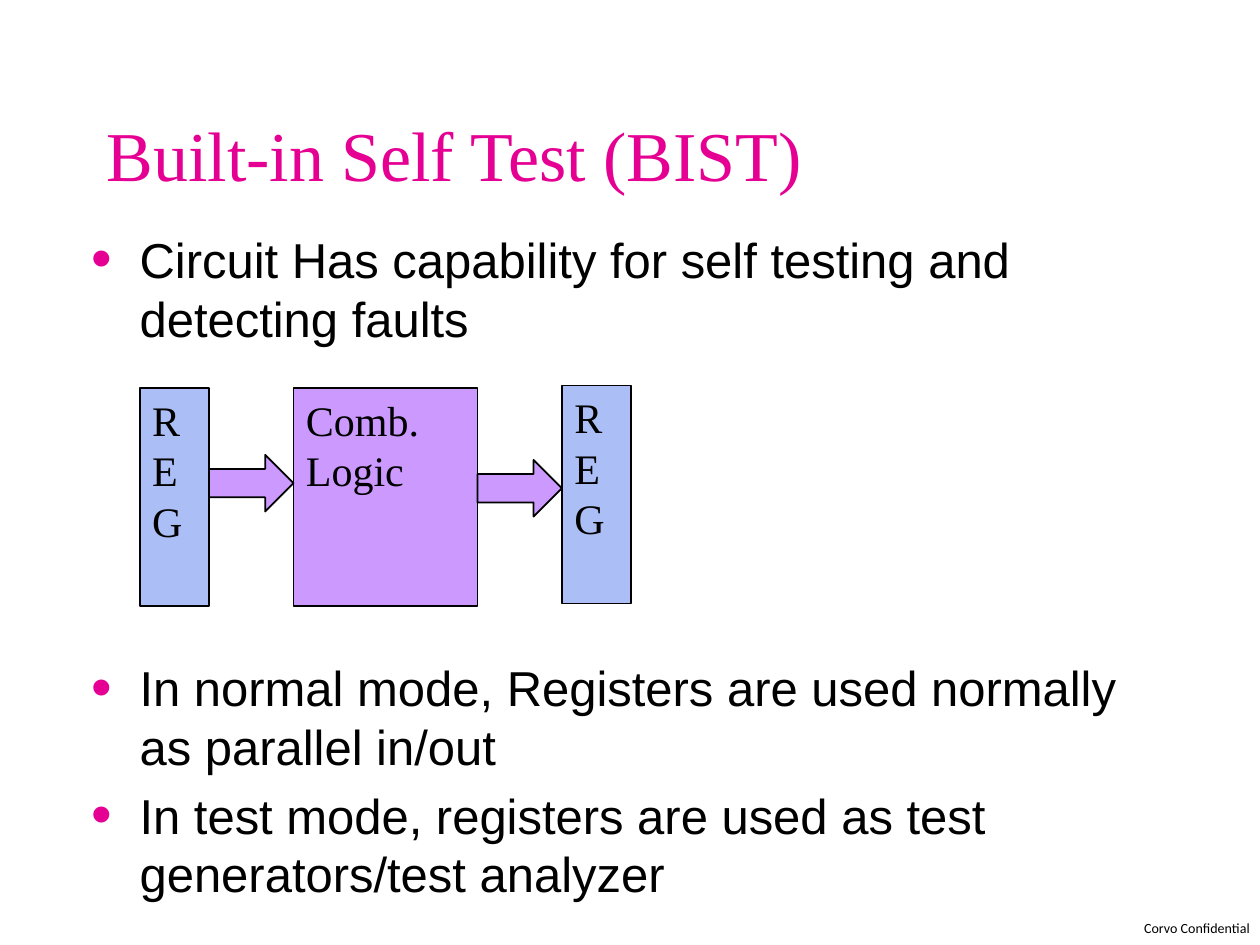
from lxml import etree
from pptx import Presentation
from pptx import util as u
from pptx.dml.color import RGBColor
from pptx.enum import shapes, text
from pptx.oxml.ns import qn

# Content
PINK, BLACK, BLUE, PURPLE = "E50093", "000000", "ABBEF5", "CC99FF"
TITLE_FONT = {"name": "Times New Roman", "size": u.Pt(40)}
BODY_FONT = {"name": "Arial", "size": u.Pt(28)}
BLOCK_FONT = {"name": "Times New Roman", "size": u.Pt(24)}
FOOTER_FONT = {"name": "Calibri", "size": u.Pt(8)}

TITLE = "Built-in Self Test (BIST)"
FOOTER = "Corvo Confidential"
BULLET_GROUPS = [  # top, paragraphs
    (1.77, ["Circuit Has capability for self testing and detecting faults"]),
    (5.17, ["In normal mode, Registers are used normally as parallel in/out",
            "In test mode, registers are used as test generators/test analyzer"]),
]
BLOCKS = [  # paragraphs, top, width, fill
    (["R", "E", "G"], 3.08, 0.55, BLUE),
    (["Comb. Logic"], 3.08, 1.46, PURPLE),
    (["REG"], 3.06, 0.55, BLUE),
]
ARROW_TOPS = [3.61, 3.65]
DIAGRAM_LEFT, BLOCK_HEIGHT, GAP, ARROW_HEIGHT = 1.11, 1.73, 0.67, 0.45

presentation = Presentation()
presentation.slide_width, presentation.slide_height = u.Inches(10), u.Inches(7.5)
slide = presentation.slides.add_slide(presentation.slide_layouts[6])


def color(value):
    return RGBColor.from_string(value)


def add_bullet(paragraph):
    properties = paragraph._p.get_or_add_pPr()
    properties.set("marL", str(u.Inches(0.38)))
    properties.set("indent", str(u.Inches(-0.38)))
    bullet_color = etree.SubElement(properties, qn("a:buClr"))
    etree.SubElement(bullet_color, qn("a:srgbClr"), val=PINK)
    etree.SubElement(properties, qn("a:buSzPct"), val="120000")
    etree.SubElement(properties, qn("a:buFont"), typeface=BODY_FONT["name"])
    etree.SubElement(properties, qn("a:buChar"), char="•")


def write(shape, lines, font, font_color=BLACK, bullets=False, **frame_values):
    frame = shape.text_frame
    for name, value in {"word_wrap": True, **frame_values}.items():
        setattr(frame, name, value)
    for index, line in enumerate(lines):
        paragraph = frame.paragraphs[0] if index == 0 else frame.add_paragraph()
        paragraph.alignment = text.PP_ALIGN.LEFT
        if bullets:
            add_bullet(paragraph)
            if index:
                paragraph.space_before = u.Pt(5.6)
        run = paragraph.add_run()
        run.text = line
        for name, value in font.items():
            setattr(run.font, name, value)
        run.font.color.rgb = color(font_color)


def add_text(left, top, width, height, *args, **kwargs):
    box = slide.shapes.add_textbox(*map(u.Inches, (left, top, width, height)))
    write(box, *args, **kwargs)


def add_shape(kind, left, top, width, height, fill):
    shape = slide.shapes.add_shape(kind, *map(u.Inches, (left, top, width, height)))
    shape.shadow.inherit = False
    shape.fill.solid()
    shape.fill.fore_color.rgb = color(fill)
    shape.line.color.rgb = color(BLACK)
    shape.line.width = u.Pt(1)
    return shape


# Footer, title and bullets
add_text(9.08, 7.3, 0.92, 0.13, [FOOTER], FOOTER_FONT,
         margin_left=0, margin_top=0, margin_right=0, margin_bottom=0)
add_text(0.75, 0.52, 8.5, 1.4, [TITLE], TITLE_FONT, PINK,
         vertical_anchor=text.MSO_ANCHOR.MIDDLE)
for top, lines in BULLET_GROUPS:
    add_text(0.63, top, 8.5, 1.11, lines, BODY_FONT, bullets=True)

# Block diagram, with an arrow filling each gap
left = DIAGRAM_LEFT
arrow_lefts = []
for lines, top, width, fill in BLOCKS:
    block = add_shape(shapes.MSO_SHAPE.RECTANGLE, left, top, width, BLOCK_HEIGHT, fill)
    write(block, lines, BLOCK_FONT, vertical_anchor=text.MSO_ANCHOR.TOP)
    arrow_lefts.append(left + width)
    left += width + GAP
for left, top in zip(arrow_lefts, ARROW_TOPS):
    add_shape(shapes.MSO_SHAPE.RIGHT_ARROW, left, top, GAP, ARROW_HEIGHT, PURPLE)

presentation.save("out.pptx")
